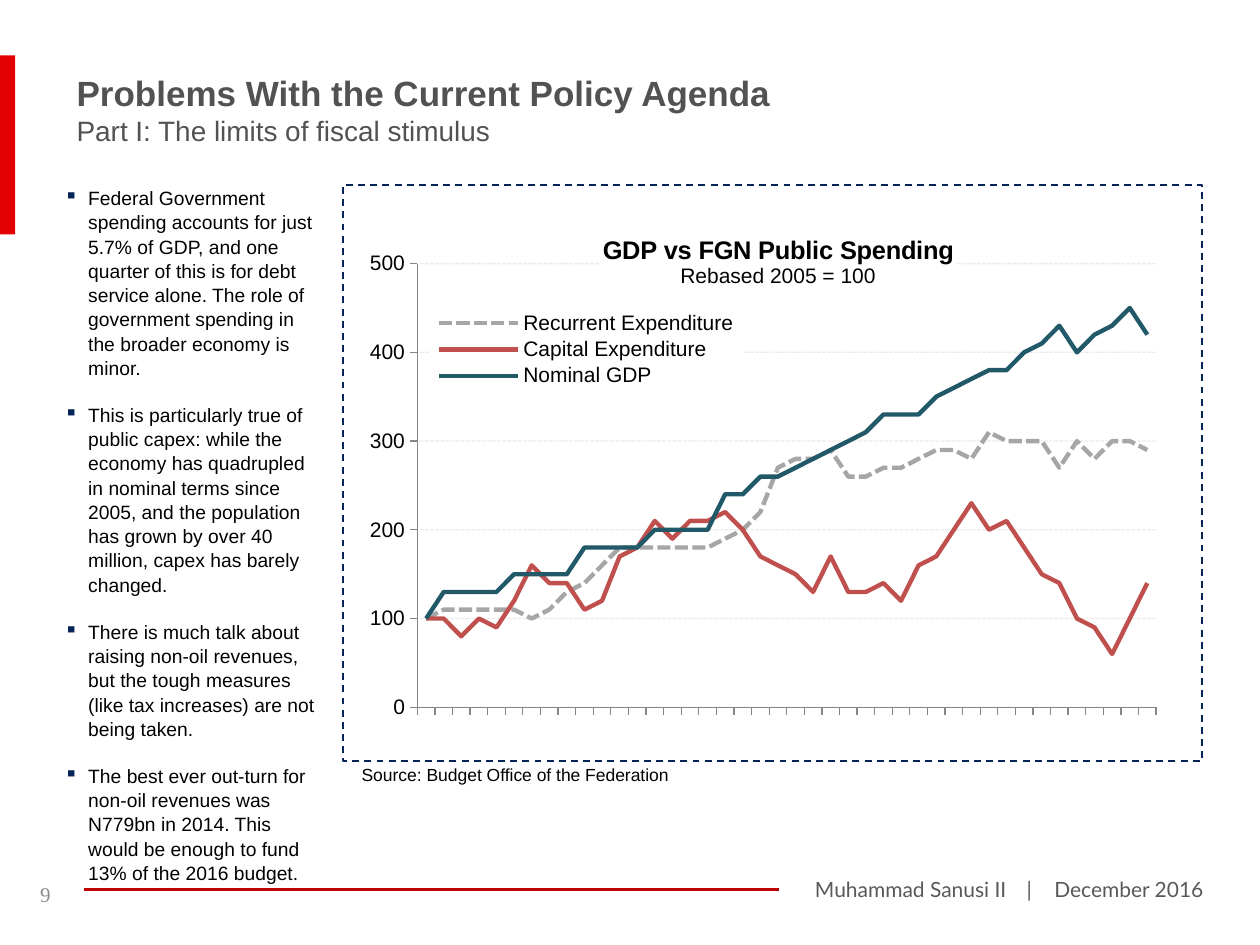
from lxml import etree
from pptx import Presentation
from pptx.chart.data import CategoryChartData
from pptx.dml.color import RGBColor
from pptx.enum.chart import XL_CHART_TYPE, XL_LEGEND_POSITION, XL_TICK_LABEL_POSITION, XL_TICK_MARK
from pptx.enum.dml import MSO_LINE
from pptx.enum.shapes import MSO_CONNECTOR, MSO_SHAPE
from pptx.oxml import parse_xml
from pptx.oxml.ns import nsdecls, qn
from pptx.util import Inches, Pt

RECTANGLE = MSO_SHAPE.RECTANGLE
STRAIGHT = MSO_CONNECTOR.STRAIGHT
LINE_CHART = XL_CHART_TYPE.LINE
LEGEND_RIGHT = XL_LEGEND_POSITION.RIGHT
NO_LABELS = XL_TICK_LABEL_POSITION.NONE
TICK_OUTSIDE = XL_TICK_MARK.OUTSIDE
DASH = MSO_LINE.DASH
SHORT_DASH = MSO_LINE.SQUARE_DOT

COLORS = {
    "accent": "E20000", "rule": "C00000", "navy": "042556", "title": "525252",
    "footer": "595959", "number": "8C8C8C", "black": "000000", "axis": "868686",
    "recurrent": "A6A6A6", "capital": "C0504D", "gdp": "215968",
}

BULLETS = [
    "Federal Government spending accounts for just 5.7% of GDP, and one quarter of this is for debt "
    "service alone. The role of government spending in the broader economy is minor.",
    "This is particularly true of public capex: while the economy has quadrupled in nominal terms since "
    "2005, and the population has grown by over 40 million, capex has barely changed.",
    "There is much talk about raising non-oil revenues, but the tough measures (like tax increases) "
    "are not being taken.",
    "The best ever out-turn for non-oil revenues was N779bn in 2014. This would be enough to fund "
    "13% of the 2016 budget.",
]

QUARTERS = [f"Q{index % 4 + 1}{5 + index // 4:02d}" for index in range(3, 45)]
SERIES = [
    ("Recurrent Expenditure", "recurrent", SHORT_DASH,
     [100, 110, 110, 110, 110, 110, 100, 110, 130, 140, 160, 180, 180, 180, 180, 180, 180, 190, 200, 220, 270,
      280, 280, 290, 260, 260, 270, 270, 280, 290, 290, 280, 310, 300, 300, 300, 270, 300, 280, 300, 300, 290]),
    ("Capital Expenditure", "capital", None,
     [100, 100, 80, 100, 90, 120, 160, 140, 140, 110, 120, 170, 180, 210, 190, 210, 210, 220, 200, 170, 160,
      150, 130, 170, 130, 130, 140, 120, 160, 170, 200, 230, 200, 210, 180, 150, 140, 100, 90, 60, 100, 140]),
    ("Nominal GDP", "gdp", None,
     [100, 130, 130, 130, 130, 150, 150, 150, 150, 180, 180, 180, 180, 200, 200, 200, 200, 240, 240, 260, 260,
      270, 280, 290, 300, 310, 330, 330, 330, 350, 360, 370, 380, 380, 400, 410, 430, 400, 420, 430, 450, 420]),
]


def color(name):
    return RGBColor.from_string(COLORS[name])


def format_font(font, size=11, name="Arial", fill="black", bold=False):
    font.size = Pt(size)
    font.name = name
    font.bold = bold
    font.color.rgb = color(fill)


def write(paragraph, text, bullet=None, tabs=(), spacing=None, after=None, **style):
    run = paragraph.add_run()
    run.text = text
    format_font(run.font, **style)
    if spacing:
        paragraph.line_spacing = spacing
    if after:
        paragraph.space_after = Pt(after)
    properties = paragraph._p.get_or_add_pPr()
    if bullet:
        properties.set("marL", str(Inches(0.19)))
        properties.set("indent", str(-Inches(0.19)))
        bullet_color = etree.SubElement(properties, qn("a:buClr"))
        etree.SubElement(bullet_color, qn("a:srgbClr"), val=COLORS["navy"])
        etree.SubElement(properties, qn("a:buChar"), char=bullet)
    if tabs:
        tab_list = etree.SubElement(properties, qn("a:tabLst"))
        for position in tabs:
            etree.SubElement(tab_list, qn("a:tab"), pos=str(Inches(position)), algn="l")


def manual_layout(element, inner=False, **fractions):
    for old in element.findall(qn("c:layout")):
        element.remove(old)
    layout = parse_xml(f"<c:layout {nsdecls('c')}><c:manualLayout/></c:layout>")
    if inner:
        etree.SubElement(layout[0], qn("c:layoutTarget"), val="inner")
    for tag in ("xMode", "yMode"):
        etree.SubElement(layout[0], qn(f"c:{tag}"), val="edge")
    for tag, value in fractions.items():
        etree.SubElement(layout[0], qn(f"c:{tag}"), val=str(value))
    overlay = element.find(qn("c:overlay"))
    if overlay is None:
        element.insert(0, layout)
    else:
        overlay.addprevious(layout)
        overlay.addnext(parse_xml(
            f"<c:spPr {nsdecls('c', 'a')}><a:solidFill><a:srgbClr val='FFFFFF'/></a:solidFill></c:spPr>"))


class SlideBuilder:
    def __init__(self, slide):
        self.slide = slide

    def text(self, box, lines, margins=None):
        shape = self.slide.shapes.add_textbox(*map(Inches, box))
        frame = shape.text_frame
        frame.word_wrap = True
        if margins:
            (frame.margin_left, frame.margin_top,
             frame.margin_right, frame.margin_bottom) = map(Inches, margins)
        for index, (text, style) in enumerate(lines):
            paragraph = frame.add_paragraph() if index else frame.paragraphs[0]
            write(paragraph, text, **style)

    def rectangle(self, box, fill=None, outline=None):
        shape = self.slide.shapes.add_shape(RECTANGLE, *map(Inches, box))
        shape.shadow.inherit = False
        if fill:
            shape.fill.solid()
            shape.fill.fore_color.rgb = color(fill)
        else:
            shape.fill.background()
        if outline:
            shape.line.color.rgb = color(outline)
            shape.line.width = Pt(1)
            shape.line.dash_style = DASH
        else:
            shape.line.fill.background()

    def rule(self, start, end, stroke):
        connector = self.slide.shapes.add_connector(STRAIGHT, *map(Inches, start + end))
        connector.line.color.rgb = color(stroke)
        connector.line.width = Pt(1.5)
        etree.SubElement(connector._element.spPr, qn("a:effectLst"))

    def line_chart(self, box, title, subtitle):
        data = CategoryChartData(number_format="0")
        data.categories = QUARTERS
        for name, _, _, values in SERIES:
            data.add_series(name, values)
        chart = self.slide.shapes.add_chart(LINE_CHART, *map(Inches, box), data).chart
        format_font(chart.font, size=10)

        for series, (_, stroke, dash, _) in zip(chart.plots[0].series, SERIES):
            series.smooth = False
            series.format.line.color.rgb = color(stroke)
            series.format.line.width = Pt(2.5)
            if dash:
                series.format.line.dash_style = dash

        for axis in (chart.category_axis, chart.value_axis):
            axis.major_tick_mark = TICK_OUTSIDE
            axis.format.line.color.rgb = color("axis")
            axis.format.line.width = Pt(0.75)
            format_font(axis.tick_labels.font, size=12)
        chart.category_axis.tick_label_position = NO_LABELS
        value_axis = chart.value_axis
        value_axis.minimum_scale, value_axis.maximum_scale, value_axis.major_unit = 0, 500, 100
        value_axis.tick_labels.number_format = "0"
        value_axis.tick_labels.number_format_is_linked = False
        grid = value_axis.major_gridlines.format.line
        grid.color.rgb = color("black")
        grid.width = Pt(0.75)
        grid.dash_style = SHORT_DASH
        grid_color = value_axis.major_gridlines._xAx.find(qn("c:majorGridlines")).find(".//" + qn("a:srgbClr"))
        etree.SubElement(grid_color, qn("a:alpha"), val="7000")

        frame = chart.chart_title.text_frame
        write(frame.paragraphs[0], title, size=14.5, bold=True)
        write(frame.add_paragraph(), subtitle, size=12)
        title_element = chart.chart_title._element
        title_element.find(qn("c:overlay")).set("val", "1")
        manual_layout(title_element, x=0.29, y=0.04)

        chart.has_legend = True
        chart.legend.position = LEGEND_RIGHT
        chart.legend.include_in_layout = True
        format_font(chart.legend.font, size=12)
        manual_layout(chart.legend._element, x=0.09, y=0.18, w=0.37, h=0.15)
        manual_layout(chart._chartSpace.chart.plotArea, inner=True, x=0.076, y=0.099, w=0.87, h=0.806)


def main():
    presentation = Presentation()
    presentation.slide_width = Inches(10)
    presentation.slide_height = Inches(7.5)
    builder = SlideBuilder(presentation.slides.add_slide(presentation.slide_layouts[6]))

    builder.text((6.37, 6.91, 3.4, 0.3), [
        ("Muhammad Sanusi II\t|\tDecember 2016",
         {"size": 12, "name": "Lato", "fill": "footer", "tabs": (1.68, 1.9)})])
    builder.rule((0.67, 7.06), (6.18, 7.06), "rule")
    builder.rectangle((0, 0.44, 0.12, 1.42), fill="accent")
    builder.text((0.51, 0.52, 8.66, 0.71), [
        ("Problems With the Current Policy Agenda", {"size": 20, "fill": "title", "bold": True}),
        ("Part I: The limits of fiscal stimulus", {"size": 16, "fill": "title"})])
    bullet_style = {"bullet": "▪", "spacing": 1.05, "after": 13}
    builder.text((0.51, 1.47, 1.99, 5.35), [(text, bullet_style) for text in BULLETS], (0, 0, 0, 0))
    builder.rectangle((2.72, 1.47, 6.82, 4.57), outline="navy")
    builder.text((2.8, 6.03, 3.62, 0.24), [
        ("Source: Budget Office of the Federation", {"size": 10})], (0.07, 0.03, 0.07, 0.04))
    builder.line_chart((2.8, 1.66, 6.74, 4.37), "GDP vs FGN Public Spending", "Rebased 2005 = 100")
    builder.text((0.22, 6.95, 0.43, 0.34), [
        ("9", {"size": 12, "name": "Times New Roman", "fill": "number"})])

    presentation.save("out.pptx")


if __name__ == "__main__":
    main()
